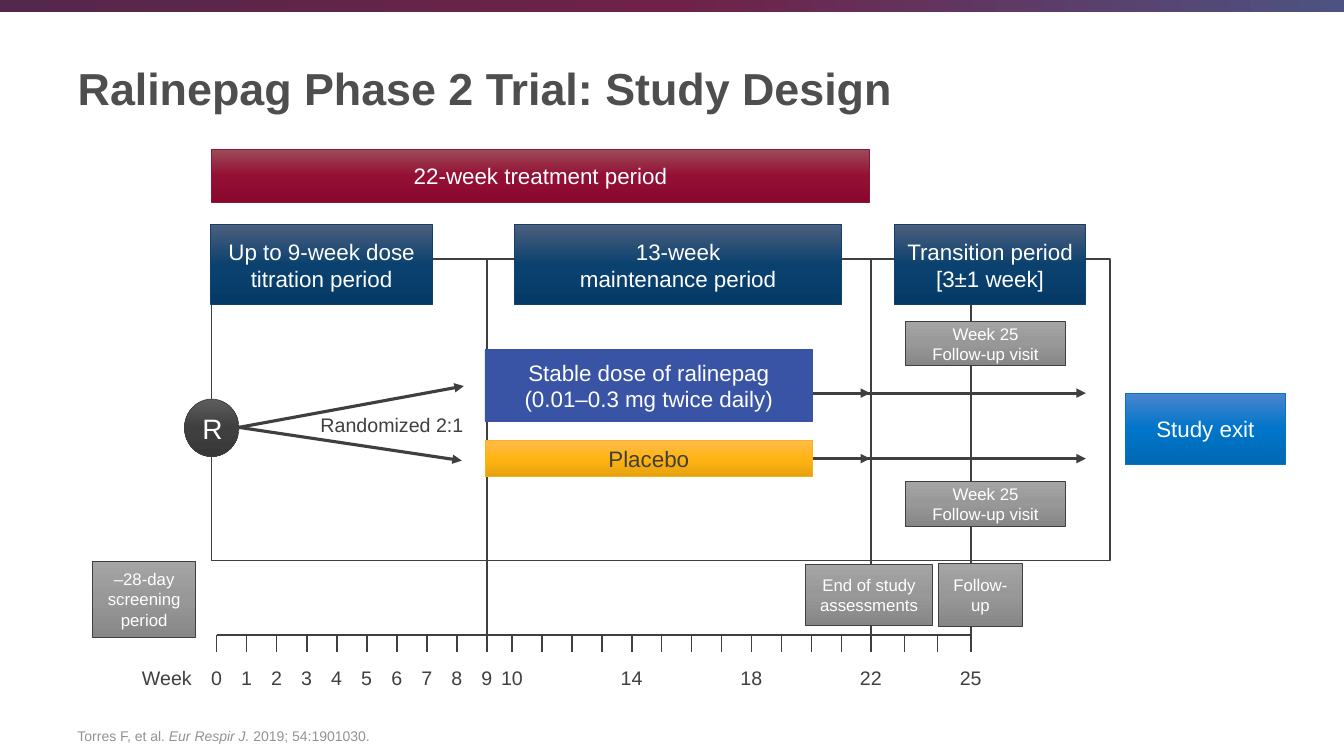
import copy
from dataclasses import dataclass, field

import lxml.etree
import pptx
import pptx.dml.color
import pptx.enum.shapes
import pptx.enum.text
import pptx.oxml.ns
import pptx.util

SHAPE = pptx.enum.shapes.MSO_SHAPE
ALIGN = pptx.enum.text.PP_ALIGN
ANCHOR = pptx.enum.text.MSO_ANCHOR
qn = pptx.oxml.ns.qn

CELLS_PER_INCH = 10
COLUMNS, ROWS = 133.3, 75

Area = tuple[float, float, float, float]
Point = tuple[float, float]
Colors = tuple[str, ...]


@dataclass(frozen=True)
class Theme:
    font: str = "Arial"
    title: str = "4D4E4D"
    citation: str = "939393"
    ink: str = "3F3F3F"
    white: str = "FFFFFF"
    banner: Colors = ("54284B", "6F2147", "4D5282")
    crimson: Colors = ("9C4C59", "940F34", "89082C")
    navy: Colors = ("4C5F7D", "0B416F", "063A66")
    sky: Colors = ("4B85D0", "0075C9", "0068B3")
    gray: Colors = ("A4A4A4", "989898", "868686")
    dark: Colors = ("5D5D5D", "3F3F3F", "383838")
    indigo: Colors = ("3954A5",)
    amber: Colors = ("FFBB4D", "FFB412", "E5A10E")
    title_size: float = 32
    marker_size: float = 20
    period_size: float = 16
    label_size: float = 14
    visit_size: float = 12
    citation_size: float = 10
    thin: float = 1
    thick: float = 2.25
    edge: float = 0.5


THEME = Theme()


@dataclass(frozen=True)
class Panel:
    text: str
    area: Area
    fill: Colors = THEME.gray
    edge: str = THEME.ink
    size: float = THEME.visit_size
    color: str = THEME.white
    kind: SHAPE = SHAPE.RECTANGLE


@dataclass(frozen=True)
class Stroke:
    start: Point
    end: Point
    width: float = THEME.thin
    arrow: bool = False


@dataclass(frozen=True)
class Timeline:
    top: float = 63
    bottom: float = 64.7
    anchors: dict[int, float] = field(
        default_factory=lambda: {0: 21.5, 9: 48.3, 10: 50.8, 22: 86.4, 25: 96.3})
    labels: tuple[int, ...] = (*range(11), 14, 18, 22, 25)

    def column(self, week: int) -> float:
        before = max(known for known in self.anchors if known <= week)
        after = min(known for known in self.anchors if known >= week)
        share = (week - before) / max(after - before, 1)
        return self.anchors[before] + share * (self.anchors[after] - self.anchors[before])


TIMELINE = Timeline()
VISIT_TEXT = "Week 25\vFollow-up visit"
FRAME: Area = (21, 25.7, 89.1, 29.9)

BACK_STROKES = [
    Stroke((TIMELINE.column(9), FRAME[1]), (TIMELINE.column(9), TIMELINE.top)),
    Stroke((TIMELINE.column(25), 26.1), (TIMELINE.column(25), TIMELINE.bottom)),
]
PERIODS = [
    Panel("22-week treatment period", (21, 14.8, 65.2, 5.3), THEME.crimson, "8E1537",
          THEME.period_size),
    *(Panel(text, (left, 22.3, width, 7.9), THEME.navy, "10416A", THEME.period_size)
      for text, left, width in (
          ("Up to 9-week dose titration period", 20.9, 22),
          ("13-week\vmaintenance period", 51, 32.5),
          ("Transition period\v[3±1 week]", 88.7, 19))),
    Panel("Study exit", (111.6, 39, 15.9, 7.1), THEME.sky, "0075C9", THEME.period_size),
    *(Panel(VISIT_TEXT, (89.8, top, 15.9, 4.4)) for top in (31.9, 47.8)),
    Panel("–28-day\vscreening\vperiod", (9.2, 55.7, 10.2, 7.5)),
    Panel("Follow-up", (93.1, 55.9, 8.3, 6.2)),
    Panel("R", (18.3, 39.6, 5.4, 5.7), THEME.dark, THEME.ink, THEME.marker_size,
          kind=SHAPE.OVAL),
]
FRONT_STROKES = [
    *(Stroke((23.7, 42.4), end, THEME.thick, True) for end in ((46, 38.3), (45.8, 45.7))),
    Stroke((TIMELINE.column(22), FRAME[1]), (TIMELINE.column(22), TIMELINE.top)),
    *(Stroke((left, row), (right, row), THEME.thick, True)
      for row in (39, 45.5) for left, right in ((80.6, 86.3), (82, 107.7))),
    Stroke((TIMELINE.column(25), TIMELINE.top), (TIMELINE.column(0), TIMELINE.top)),
    *(Stroke((TIMELINE.column(week), TIMELINE.top), (TIMELINE.column(week), TIMELINE.bottom))
      for week in range(25)),
]
TREATMENTS = [
    Panel("End of study assessments", (79.9, 56, 12.6, 6)),
    Panel("Stable dose of ralinepag\v(0.01–0.3 mg twice daily)", (48.1, 34.7, 32.5, 7.1),
          THEME.indigo, "3954A5", THEME.period_size),
    Panel("Placebo", (48.1, 43.7, 32.5, 3.6), THEME.amber, "FCB315", THEME.period_size,
          THEME.ink),
]


def cells(*counts: float) -> list[pptx.util.Length]:
    return [pptx.util.Inches(count / CELLS_PER_INCH) for count in counts]


def rgb(color: str) -> pptx.dml.color.RGBColor:
    return pptx.dml.color.RGBColor.from_string(color)


def style(frame, size: float, color: str, align=ALIGN.LEFT, bold: bool = False) -> None:
    for para in frame.paragraphs:
        para.alignment = align
        for span in para.runs:
            span.font.name = THEME.font
            span.font.size = pptx.util.Pt(size)
            span.font.color.rgb = rgb(color)
            span.font.bold = bold


def paint(shape, colors: Colors, angle: float) -> None:
    if len(colors) == 1:
        shape.fill.solid()
        shape.fill.fore_color.rgb = rgb(colors[0])
        return
    shape.fill.gradient()
    shape.fill.gradient_angle = angle
    stops = shape.element.spPr.find(".//" + qn("a:gsLst"))
    stops.append(copy.deepcopy(stops[0]))
    for stop, color, position in zip(shape.fill.gradient_stops, colors, (0, 0.5, 1)):
        stop.color.rgb = rgb(color)
        stop.position = position


def draw_panel(page, panel: Panel) -> None:
    box = page.shapes.add_shape(panel.kind, *cells(*panel.area))
    box.shadow.inherit = False
    paint(box, panel.fill, 270)
    box.line.color.rgb = rgb(panel.edge)
    box.line.width = pptx.util.Pt(THEME.edge)
    box.text_frame.text = panel.text
    box.text_frame.word_wrap = True
    box.text_frame.vertical_anchor = ANCHOR.MIDDLE
    style(box.text_frame, panel.size, panel.color, ALIGN.CENTER)


def draw_stroke(page, stroke: Stroke) -> None:
    connector = page.shapes.add_connector(
        pptx.enum.shapes.MSO_CONNECTOR.STRAIGHT, *cells(*stroke.start, *stroke.end))
    connector.line.color.rgb = rgb(THEME.ink)
    connector.line.width = pptx.util.Pt(stroke.width)
    if stroke.arrow:
        outline = connector.line._get_or_add_ln()
        lxml.etree.SubElement(outline, qn("a:tailEnd"), type="triangle")
    lxml.etree.SubElement(connector.element.spPr, qn("a:effectLst"))


def draw_text(page, text: str, area: Area, size: float, color: str):
    box = page.shapes.add_textbox(*cells(*area))
    box.text_frame.word_wrap = True
    box.text_frame.text = text
    style(box.text_frame, size, color)
    return box.text_frame


def draw_title(page) -> None:
    title = page.shapes.title
    title.left, title.top, title.width, title.height = cells(6.7, 2.2, 117.5, 13)
    title.text_frame.text = "Ralinepag Phase 2 Trial: Study Design"
    title.text_frame.vertical_anchor = ANCHOR.MIDDLE
    title.text_frame.auto_size = pptx.enum.text.MSO_AUTO_SIZE.NONE
    style(title.text_frame, THEME.title_size, THEME.title, bold=True)


def draw_banner(page) -> None:
    banner = page.shapes.add_shape(SHAPE.RECTANGLE, *cells(0, 0, COLUMNS, 1.2))
    banner.shadow.inherit = False
    paint(banner, THEME.banner, 0)
    banner.line.fill.background()


def draw_frame(page) -> None:
    frame = page.shapes.add_shape(SHAPE.RECTANGLE, *cells(*FRAME))
    frame.shadow.inherit = False
    frame.fill.background()
    frame.line.color.rgb = rgb(THEME.ink)
    frame.line.width = pptx.util.Pt(THEME.thin)


def draw_weeks(page) -> None:
    left, inset = 13.1, 1
    text = "\t".join(["Week", *map(str, TIMELINE.labels)])
    frame = draw_text(page, text, (left, 65.6, 88, 3.4), THEME.label_size, THEME.ink)
    tabs = lxml.etree.SubElement(frame.paragraphs[0]._p.get_or_add_pPr(), qn("a:tabLst"))
    for week in TIMELINE.labels:
        offset = cells(TIMELINE.column(week) - left - inset)[0]
        lxml.etree.SubElement(tabs, qn("a:tab"), pos=str(offset), algn="ctr")


def draw_citation(page) -> None:
    frame = draw_text(page, "Torres F, et al. ", (6.7, 69.5, 117.5, 4.8),
                      THEME.citation_size, THEME.citation)
    frame.vertical_anchor = ANCHOR.BOTTOM
    for text in ("Eur Respir J. ", "2019; 54:1901030."):
        frame.paragraphs[0].add_run().text = text
    style(frame, THEME.citation_size, THEME.citation)
    frame.paragraphs[0].runs[1].font.italic = True


def main() -> None:
    deck = pptx.Presentation()
    deck.slide_width, deck.slide_height = cells(COLUMNS, ROWS)
    page = deck.slides.add_slide(deck.slide_layouts.get_by_name("Title Only"))
    draw_banner(page)
    draw_citation(page)
    draw_title(page)
    draw_frame(page)
    for stroke in BACK_STROKES:
        draw_stroke(page, stroke)
    for panel in PERIODS:
        draw_panel(page, panel)
    draw_text(page, "Randomized 2:1", (30.8, 40.5, 16.3, 3.4), THEME.label_size, THEME.ink)
    draw_weeks(page)
    for stroke in FRONT_STROKES:
        draw_stroke(page, stroke)
    for panel in TREATMENTS:
        draw_panel(page, panel)
    deck.save("out.pptx")


if __name__ == "__main__":
    main()
